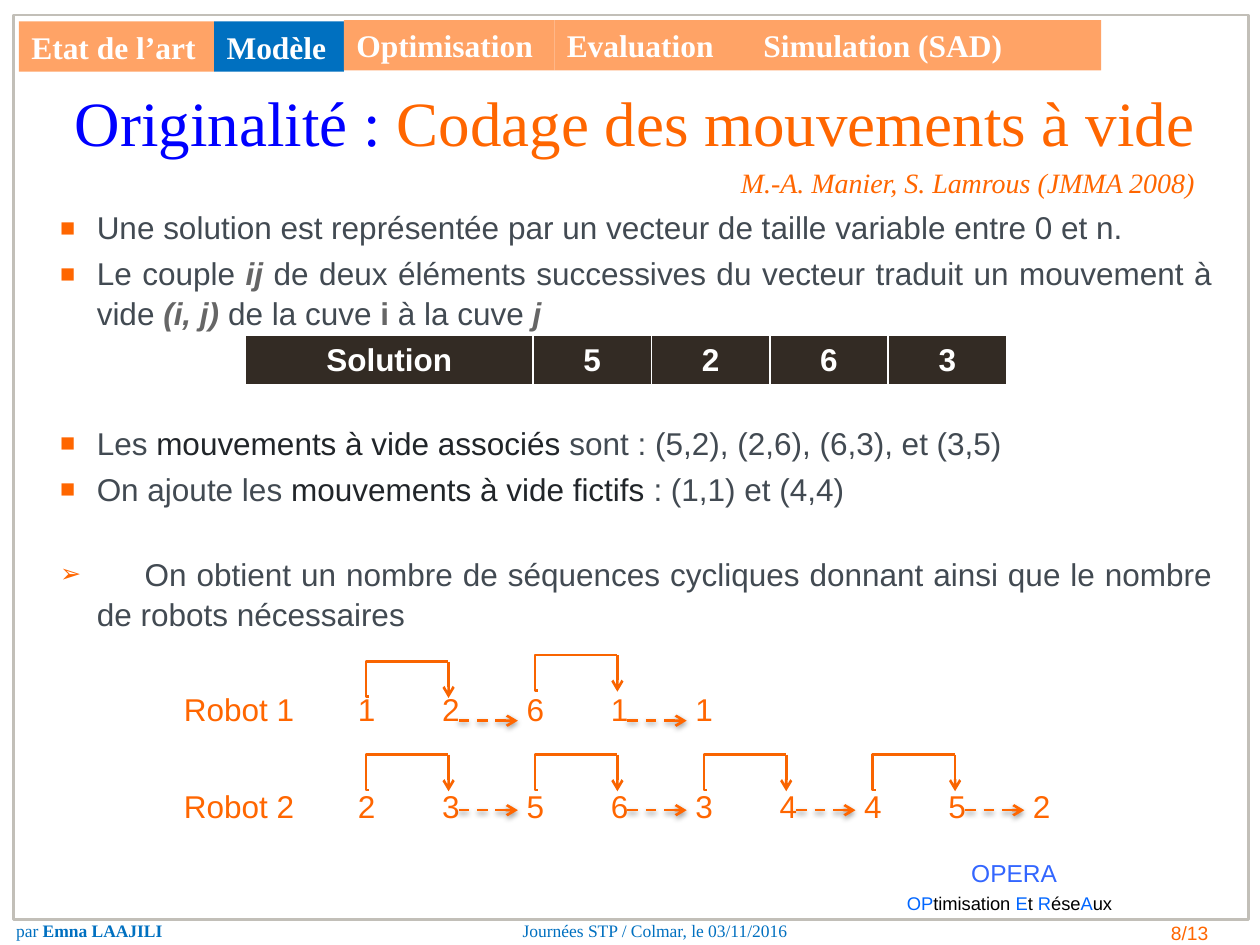
from dataclasses import dataclass

from lxml.etree import SubElement
from pptx import Presentation
from pptx.dml.color import RGBColor
from pptx.enum.dml import MSO_LINE
from pptx.enum.shapes import MSO_CONNECTOR, MSO_SHAPE
from pptx.enum.text import MSO_ANCHOR, PP_ALIGN
from pptx.oxml.ns import qn
from pptx.util import Inches, Pt


@dataclass(frozen=True)
class Theme:
    serif: str = "Times New Roman"
    sans: str = "Arial"
    white: str = "FFFFFF"
    black: str = "000000"
    orange: str = "FF6600"
    path_orange: str = "F96400"
    tab_orange: str = "FFA366"
    blue: str = "0070C0"
    title_blue: str = "0000FF"
    team_blue: str = "3366FF"
    letter_blue: str = "0066FF"
    frame: str = "C2BFB8"
    body: str = "424A52"
    strong: str = "666666"
    dark: str = "212529"
    cell: str = "332B24"
    title_size: float = 36
    text_size: float = 18
    author_size: float = 16
    team_size: float = 14
    number_size: float = 11
    motto_size: float = 10.5
    footer_size: float = 10


THEME = Theme()


def font(size, color, name=THEME.sans, **extra):
    return dict(size=Pt(size), name=name, color=color, **extra)


class SlideBuilder:
    def __init__(self, slide, theme):
        self.slide = slide
        self.theme = theme

    def format_font(self, target, values):
        for key, value in values.items():
            if key == "color":
                target.color.rgb = RGBColor.from_string(value)
            else:
                setattr(target, key, value)

    def add_runs(self, paragraph, runs, base):
        """Runs are (text, format changes) pairs."""
        for text, changes in runs:
            run = paragraph.add_run()
            run.text = text
            self.format_font(run.font, {**base, **changes})

    def text(self, left, top, width, height, paragraphs, base, wrap=True,
             align=PP_ALIGN.LEFT, frame_format=None, **paragraph_format):
        box = self.slide.shapes.add_textbox(*map(Inches, (left, top, width, height)))
        frame = box.text_frame
        for key, value in {"word_wrap": wrap, **(frame_format or {})}.items():
            setattr(frame, key, value)
        for index, runs in enumerate(paragraphs):
            paragraph = frame.add_paragraph() if index else frame.paragraphs[0]
            paragraph.alignment = align
            for key, value in paragraph_format.items():
                if index or key != "space_before":
                    setattr(paragraph, key, value)
            self.add_runs(paragraph, runs, base)
        return frame

    def bullets(self, top, height, paragraphs, mark="■", tab=None):
        frame = self.text(0.38, top, 9.34, height, paragraphs,
                          font(self.theme.text_size, self.theme.body),
                          align=PP_ALIGN.JUSTIFY, line_spacing=1.05, space_before=Pt(3.6))
        for paragraph in frame.paragraphs:
            properties = paragraph._p.get_or_add_pPr()
            properties.set("marL", str(Inches(0.29)))
            properties.set("indent", str(-Inches(0.29)))
            color = SubElement(properties, qn("a:buClr"))
            SubElement(color, qn("a:srgbClr"), val=self.theme.orange)
            SubElement(properties, qn("a:buSzPct"), val="80000")
            SubElement(properties, qn("a:buFont"), typeface=self.theme.sans)
            SubElement(properties, qn("a:buChar"), char=mark)
            if tab:
                stops = SubElement(properties, qn("a:tabLst"))
                SubElement(stops, qn("a:tab"), pos=str(Inches(tab)), algn="l")

    def rectangle(self, left, top, width, height, fill=None, line=None, label=""):
        shape = self.slide.shapes.add_shape(
            MSO_SHAPE.RECTANGLE, *map(Inches, (left, top, width, height)))
        shape.shadow.inherit = False
        if fill:
            shape.fill.solid()
            shape.fill.fore_color.rgb = RGBColor.from_string(fill)
        else:
            shape.fill.background()
        if line:
            shape.line.color.rgb = RGBColor.from_string(line)
            shape.line.width = Pt(1.5)
        else:
            shape.line.fill.background()
        if label:
            # Wrapping keeps the label at the left edge of the shape
            shape.text_frame.word_wrap = True
            shape.text_frame.margin_right = 0
            paragraph = shape.text_frame.paragraphs[0]
            paragraph.alignment = PP_ALIGN.LEFT
            self.add_runs(paragraph, [(label, {})],
                          font(self.theme.text_size, self.theme.white, self.theme.serif,
                               bold=True))

    def table(self, left, top, widths, values, base, fill=None, align=PP_ALIGN.LEFT):
        table = self.slide.shapes.add_table(
            1, len(widths), Inches(left), Inches(top), Inches(sum(widths)), Inches(0.41)).table
        table.first_row = table.horz_banding = False
        for column, width in zip(table.columns, widths):
            column.width = Inches(width)
        for cell in table.iter_cells():
            if fill:
                for side, points in (("L", 1), ("R", 1), ("T", 1), ("B", 3)):
                    border = SubElement(cell._tc.get_or_add_tcPr(), qn(f"a:ln{side}"),
                                        w=str(Pt(points)))
                    SubElement(SubElement(border, qn("a:solidFill")), qn("a:srgbClr"),
                               val=self.theme.white)
                cell.fill.solid()
                cell.fill.fore_color.rgb = RGBColor.from_string(fill)
                cell.vertical_anchor = MSO_ANCHOR.MIDDLE
            else:
                cell.fill.background()
        for cell, value in zip(table.iter_cells(), values):
            paragraph = cell.text_frame.paragraphs[0]
            paragraph.alignment = align
            self.add_runs(paragraph, [(value, {})], base)

    def connector(self, start, end, color, kind=MSO_CONNECTOR.STRAIGHT,
                  arrow=True, dashed=False):
        connector = self.slide.shapes.add_connector(kind, *map(Inches, (*start, *end)))
        connector.line.color.rgb = RGBColor.from_string(color)
        connector.line.width = Pt(1.5)
        if dashed:
            connector.line.dash_style = MSO_LINE.DASH
        if arrow:
            SubElement(connector.line._get_or_add_ln(), qn("a:tailEnd"), type="arrow")
        effects = SubElement(connector._element.spPr, qn("a:effectLst"))
        if dashed:
            shadow = SubElement(effects, qn("a:outerShdw"), blurRad=str(Pt(3.1)),
                                dist=str(Pt(1.6)), dir="5400000", rotWithShape="0")
            shade = SubElement(shadow, qn("a:srgbClr"), val=self.theme.black)
            SubElement(shade, qn("a:alpha"), val="38000")
        return connector

    def loaded_move(self, left, top):
        """Elbow that rises left of its start, then an arrow down to the next tank."""
        corner = (left + 0.63, top)
        elbow = self.connector((left, top + 0.28), corner, self.theme.path_orange,
                               MSO_CONNECTOR.ELBOW, arrow=False)
        guides = elbow._element.spPr.find(qn("a:prstGeom")).find(qn("a:avLst"))
        SubElement(guides, qn("a:gd"), name="adj1", fmla="val -3800")
        self.connector(corner, (corner[0], top + 0.29), self.theme.path_orange)

    def empty_move(self, left, top):
        self.connector((left, top), (left + 0.47, top), self.theme.orange, dashed=True)


def main():
    presentation = Presentation()
    presentation.slide_width, presentation.slide_height = Inches(10), Inches(7.5)
    slide = presentation.slides.add_slide(presentation.slide_layouts[6])
    builder = SlideBuilder(slide, THEME)

    # Frame, footer and team name
    footer = font(THEME.footer_size, THEME.blue, THEME.serif)
    bottom = {"vertical_anchor": MSO_ANCHOR.BOTTOM}
    for left, width, runs in (
            (0.03, 3, [("par ", {}), ("Emna LAAJILI", {"bold": True})]),
            (4.05, 4, [("Journées STP / Colmar, le 03/11/2016", {})])):
        builder.text(left, 7.13, width, 0.39, [runs], footer,
                     frame_format=bottom, line_spacing=Pt(12))
    builder.rectangle(0.11, 0.12, 9.8, 7.18, line=THEME.frame)
    builder.text(7.61, 6.76, 1.13, 0.34, [[("OPERA", {})]],
                 font(THEME.team_size, THEME.team_blue))
    blue = {"color": THEME.letter_blue}
    motto = [("OP", blue), ("timisation ", {}), ("E", blue), ("t ", {}),
             ("R", blue), ("ése", {}), ("A", blue), ("ux", {})]
    builder.text(7.1, 7.03, 2.6, 0.29, [motto], font(THEME.motto_size, THEME.black))

    # Title and authors
    builder.text(0.15, 0.65, 9.43, 0.93, [
        [("Originalité : ", {"color": THEME.title_blue}), ("Codage des mouvements à vide", {})],
        [("M.-A. Manier, S. Lamrous (JMMA 2008)",
          {"size": Pt(THEME.author_size), "italic": True})],
    ], font(THEME.title_size, THEME.orange, THEME.serif), align=PP_ALIGN.RIGHT,
        frame_format={**bottom, "margin_left": 0, "margin_top": 0, "margin_bottom": 0},
        space_before=Pt(3.6))

    # Section ribbon
    left = 0.15
    for label, width, top in (("Etat de l’art", 1.55, 0.17), ("Modèle", 1.03, 0.17),
                              ("Optimisation", 1.67, 0.16), ("Evaluation", 1.56, 0.16),
                              ("Simulation (SAD)", 2.78, 0.16)):
        fill = THEME.blue if label == "Modèle" else THEME.tab_orange
        builder.rectangle(left, top, width, 0.4, fill=fill, label=label)
        left += width

    # Body text
    bold = {"color": THEME.strong, "bold": True}
    strong = {**bold, "italic": True}
    dark = {"color": THEME.dark}
    builder.bullets(1.59, 1.05, [
        [("Une solution est représentée par un vecteur de taille variable entre 0 et n.", {})],
        [("Le couple ", {}), ("ij ", strong),
         ("de deux éléments successives du vecteur traduit un mouvement à vide ", {}),
         ("(i, j) ", strong), ("de la cuve ", {}), ("i", bold), (" à la cuve ", {}),
         ("j", strong)]])
    builder.bullets(3.3, 0.75, [
        [("Les ", {}), ("mouvements à vide associés ", dark),
         ("sont : (5,2), (2,6), (6,3), et (3,5)", {})],
        [("On ajoute les ", {}), ("mouvements à vide fictifs ", dark),
         (": (1,1) et (4,4)", {})]])
    builder.bullets(4.34, 0.7, [
        [("\tOn obtient un nombre de séquences cycliques donnant ainsi que le nombre "
          "de robots nécessaires", {})]], mark="➢", tab=0.67)

    # Solution vector and robot sequences
    builder.table(1.95, 2.66, [2.28] + [0.94] * 4, ["Solution", *"5263"],
                  font(THEME.text_size, THEME.white, bold=True), THEME.cell, PP_ALIGN.CENTER)
    for top, values in ((5.45, ["Robot 1", *"12611"]), (6.22, ["Robot 2", *"235634452"])):
        builder.table(1.36, top, [1.38] + [0.67] * 9, values,
                      font(THEME.text_size, THEME.orange))

    # Moves between tanks
    step = 1.34
    for empty_top, loaded_tops in ((5.72, (5.25, 5.2)), (6.43, (5.99,) * 4)):
        for index, loaded_top in enumerate(loaded_tops):
            builder.empty_move(3.64 + index * step, empty_top)
            builder.loaded_move(2.93 + index * step, loaded_top)

    # Page number
    builder.text(8.73, 7.26, 0.96, 0.24, [[("8/13", {})]],
                 font(THEME.number_size, THEME.orange), align=PP_ALIGN.RIGHT)

    presentation.save("out.pptx")


if __name__ == "__main__":
    main()
